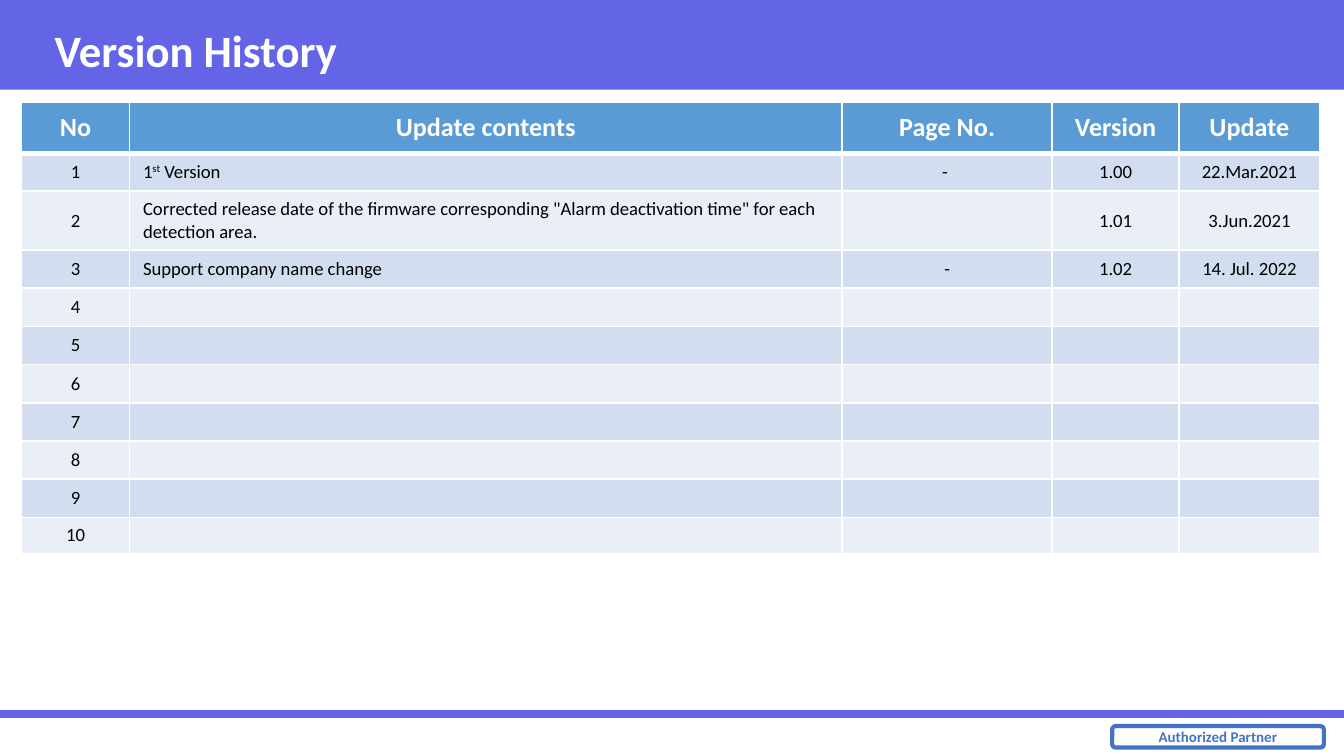
from dataclasses import dataclass
from typing import Any

from lxml.etree import SubElement
from pptx import Presentation
from pptx.dml.color import RGBColor
from pptx.enum.shapes import MSO_CONNECTOR as Connector, MSO_SHAPE as Shape
from pptx.enum.text import MSO_ANCHOR as Anchor, MSO_AUTO_SIZE as AutoSize, PP_ALIGN as Align
from pptx.oxml.ns import qn
from pptx.util import Emu, Inches, Pt

WHITE = RGBColor(0xFF, 0xFF, 0xFF)
BLACK = RGBColor(0x00, 0x00, 0x00)
VIOLET = RGBColor(0x64, 0x64, 0xE6)
BADGE_BLUE = RGBColor(0x44, 0x72, 0xC4)
HEADER_BLUE = RGBColor(0x5B, 0x9B, 0xD5)
ODD_ROW = RGBColor(0xD2, 0xDE, 0xEF)
EVEN_ROW = RGBColor(0xEA, 0xEF, 0xF7)

WIDTH = Inches(10)
HEIGHT = Emu(WIDTH * 9 // 16)
ROW_COUNT = 10
COLUMN_SHARES = (8.05, 53, 15.65, 9.42, 10.5)
HEADER_SHARE, ROW_SHARE, LAST_ROW_SHARE = 6.7, 5.06, 4.8


@dataclass(frozen=True)
class Area:
    """A box in percent of the slide's width and height."""
    left: float
    top: float
    width: float
    height: float

    def lengths(self) -> tuple[Emu, Emu, Emu, Emu]:
        return across(self.left), down(self.top), across(self.width), down(self.height)


@dataclass(frozen=True)
class Span:
    text: str
    baseline: int = 0


@dataclass(frozen=True)
class Update:
    contents: tuple[Span, ...]
    page_no: str
    version: str
    date: str

    def cells(self) -> list[tuple[Span, ...]]:
        return [self.contents, *((Span(text),) for text in (self.page_no, self.version, self.date))]


HEADINGS = ("No", "Update contents", "Page No.", "Version", "Update")
UPDATES = (
    Update((Span("1"), Span("st", 30000), Span(" Version")), "- ", "1.00", "22.Mar.2021"),
    Update((Span("Corrected release date of the firmware corresponding "
                 "\"Alarm deactivation time\" for each detection area."),),
           "", "1.01", "3.Jun.2021"),
    Update((Span("Support company name change"),), "-", "1.02", "14. Jul. 2022"),
)


def across(percent: float) -> Emu:
    return Emu(round(WIDTH * percent / 100))


def down(percent: float) -> Emu:
    return Emu(round(HEIGHT * percent / 100))


def text_format(size: float, color: RGBColor, bold: bool) -> dict[str, Any]:
    return {"name": "Calibri", "size": Pt(size), "bold": bold, "color": color}


TITLE_FORMAT = text_format(24, WHITE, True)
BADGE_FORMAT = text_format(8, BADGE_BLUE, True)
HEADER_FORMAT = text_format(14, WHITE, True)
BODY_FORMAT = text_format(10, BLACK, False)


def write(para: Any, spans: tuple[Span, ...], style: dict[str, Any], align: Align) -> None:
    para.alignment = align
    for span in spans:
        if not span.text:
            continue
        run = para.add_run()
        run.text = span.text
        for key, value in style.items():
            if key == "color":
                run.font.color.rgb = value
            else:
                setattr(run.font, key, value)
        if span.baseline:
            run._r.get_or_add_rPr().set("baseline", str(span.baseline))
    # The end mark keeps empty cells from growing to the default text size.
    SubElement(para._p, qn("a:endParaRPr"), sz=str(round(style["size"].pt * 100)))


def set_borders(cell: Any, bottom: float) -> None:
    properties = cell._tc.get_or_add_tcPr()
    for side, points in {"lnL": 1, "lnR": 1, "lnT": 1, "lnB": bottom}.items():
        line = SubElement(properties, qn(f"a:{side}"), w=str(Pt(points)))
        fill = SubElement(line, qn("a:solidFill"))
        SubElement(fill, qn("a:srgbClr"), val=str(WHITE))


def add_frame(page: Any) -> None:
    """Draw the title band, the footer rule and the partner badge."""
    band = page.shapes.add_shape(Shape.RECTANGLE, *Area(0, 0, 100, 11.85).lengths())
    band.shadow.inherit = False
    band.fill.solid()
    band.fill.fore_color.rgb = VIOLET
    band.line.fill.background()

    rule_top = down(94.45)
    rule = page.shapes.add_connector(Connector.STRAIGHT, 0, rule_top, WIDTH, rule_top)
    rule.line.color.rgb = VIOLET
    rule.line.width = Pt(4.5)
    SubElement(rule._element.spPr, qn("a:effectLst"))

    badge = page.shapes.add_shape(Shape.ROUNDED_RECTANGLE, *Area(82.75, 96.04, 15.75, 2.85).lengths())
    badge.shadow.inherit = False
    badge.fill.background()
    badge.line.color.rgb = BADGE_BLUE
    badge.line.width = Pt(2.25)
    badge.text_frame.word_wrap = False
    badge.text_frame.vertical_anchor = Anchor.MIDDLE
    write(badge.text_frame.paragraphs[0], (Span("Authorized Partner"),), BADGE_FORMAT, Align.CENTER)


def place_title(page: Any, text: str) -> None:
    title = page.shapes.title
    title.left, title.top, title.width, title.height = Area(3.06, 1.42, 92.6, 10.32).lengths()
    frame_format = {"word_wrap": True, "auto_size": AutoSize.NONE, "vertical_anchor": Anchor.MIDDLE}
    for key, value in frame_format.items():
        setattr(title.text_frame, key, value)
    write(title.text_frame.paragraphs[0], (Span(text),), TITLE_FORMAT, Align.LEFT)
    page.shapes._spTree.append(title._element)


def add_history(page: Any) -> None:
    heights = [HEADER_SHARE, *[ROW_SHARE] * (ROW_COUNT - 1), LAST_ROW_SHARE]
    area = Area(1.6, 13.55, sum(COLUMN_SHARES), sum(heights))
    table = page.shapes.add_table(len(heights), len(COLUMN_SHARES), *area.lengths()).table
    table.horz_banding = False
    for column, share in zip(table.columns, COLUMN_SHARES):
        column.width = across(share)
    for row, share in zip(table.rows, heights):
        row.height = down(share)

    blank = Update((), "", "", "")
    updates = [*UPDATES, *[blank] * (ROW_COUNT - len(UPDATES))]
    lines = [[(Span(text),) for text in HEADINGS]]
    lines += [[(Span(str(number)),), *update.cells()] for number, update in enumerate(updates, 1)]
    for row_no, line in enumerate(lines):
        is_header = row_no == 0
        color = HEADER_BLUE if is_header else ODD_ROW if row_no % 2 else EVEN_ROW
        for column_no, spans in enumerate(line):
            cell = table.cell(row_no, column_no)
            set_borders(cell, bottom=3 if is_header else 1)
            cell.fill.solid()
            cell.fill.fore_color.rgb = color
            cell.vertical_anchor = Anchor.MIDDLE
            align = Align.LEFT if column_no == 1 and not is_header else Align.CENTER
            write(cell.text_frame.paragraphs[0], spans,
                  HEADER_FORMAT if is_header else BODY_FORMAT, align)


def main() -> None:
    deck = Presentation()
    deck.slide_width, deck.slide_height = WIDTH, HEIGHT
    page = deck.slides.add_slide(deck.slide_layouts.get_by_name("Title Only"))
    add_frame(page)
    place_title(page, "Version History")
    add_history(page)
    deck.save("out.pptx")


if __name__ == "__main__":
    main()
